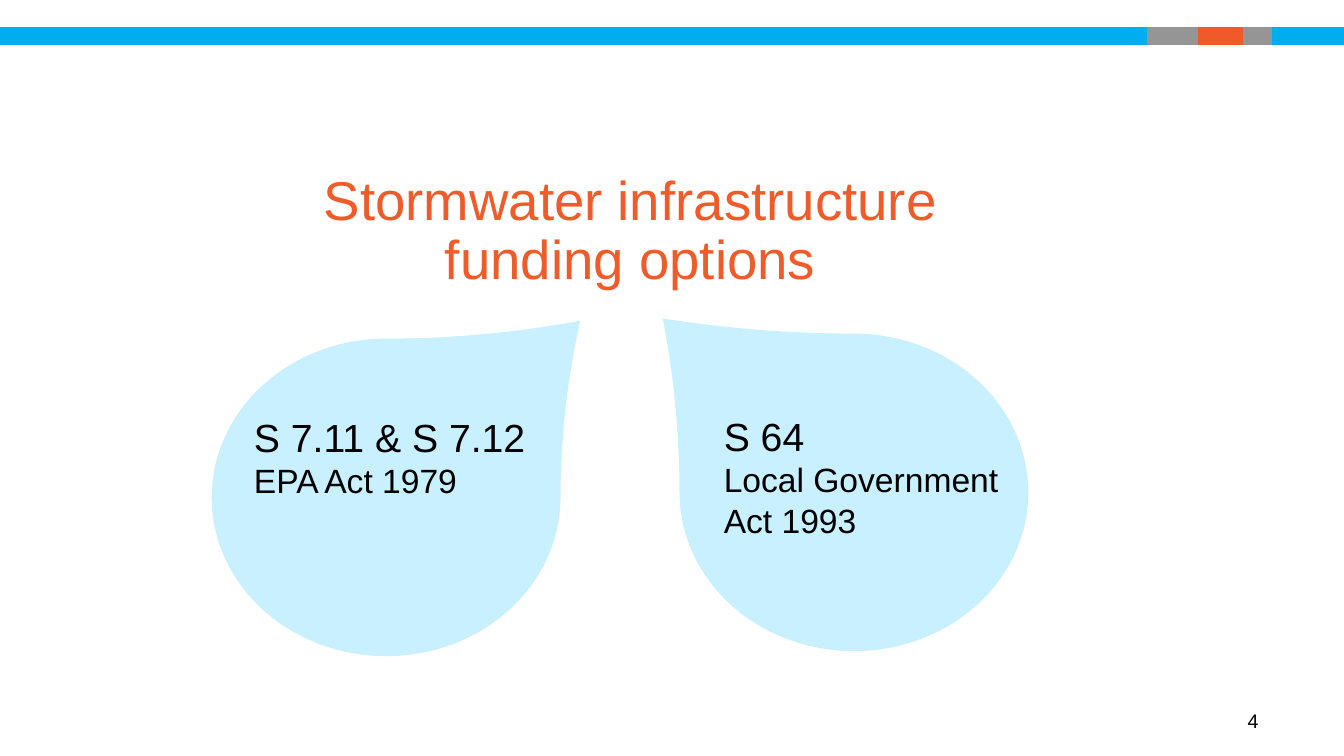
from dataclasses import dataclass

from pptx import Presentation
from pptx.dml.color import RGBColor
from pptx.enum.shapes import MSO_SHAPE
from pptx.enum.text import MSO_ANCHOR, MSO_AUTO_SIZE, PP_ALIGN
from pptx.util import Inches, Pt


@dataclass(frozen=True)
class Theme:
    font: str = "Arial"
    blue: str = "00ADEF"
    grey: str = "959595"
    orange: str = "F05A28"
    title_color: str = "F15A29"
    drop: str = "C9F0FF"
    ink: str = "000000"
    title_size: int = 39
    section_size: int = 28
    act_size: int = 24
    number_size: int = 14


class SlideBuilder:
    def __init__(self, slide, theme):
        self.slide = slide
        self.theme = theme

    def add_run(self, paragraph, text, size, color):
        run = paragraph.add_run()
        run.text = text
        run.font.name = self.theme.font
        run.font.size = Pt(size)
        run.font.color.rgb = RGBColor.from_string(color)

    def add_title(self, text, left, top, width, height):
        title = self.slide.shapes.title
        title.left, title.top = Inches(left), Inches(top)
        title.width, title.height = Inches(width), Inches(height)
        frame = title.text_frame
        frame.word_wrap = True
        frame.auto_size = MSO_AUTO_SIZE.NONE
        frame.vertical_anchor = MSO_ANCHOR.MIDDLE
        heading = frame.paragraphs[0]
        heading.alignment = PP_ALIGN.CENTER
        heading.line_spacing = 0.9
        self.add_run(heading, text, self.theme.title_size, self.theme.title_color)

    def add_filled(self, kind, left, top, width, height, color):
        shape = self.slide.shapes.add_shape(
            kind, Inches(left), Inches(top), Inches(width), Inches(height))
        shape.shadow.inherit = False
        shape.fill.solid()
        shape.fill.fore_color.rgb = RGBColor.from_string(color)
        return shape

    def add_band(self, left, width, color):
        band = self.add_filled(MSO_SHAPE.RECTANGLE, left, 0.28, width, 0.16, color)
        band.line.color.rgb = RGBColor.from_string(color)
        band.line.width = Pt(1)

    def add_drop(self, left, top, point, flipped):
        drop = self.add_filled(
            MSO_SHAPE.TEAR, left, top, 3.46, 3.15, self.theme.drop)
        drop.adjustments[0] = point
        drop.line.fill.background()
        if flipped:
            drop._element.spPr.get_or_add_xfrm().set("flipH", "1")

    def add_text(self, paragraphs, left, top, width, height,
                 align=PP_ALIGN.LEFT, anchor=MSO_ANCHOR.TOP,
                 fit=MSO_AUTO_SIZE.SHAPE_TO_FIT_TEXT):
        box = self.slide.shapes.add_textbox(
            Inches(left), Inches(top), Inches(width), Inches(height))
        frame = box.text_frame
        frame.word_wrap = True
        frame.auto_size = fit
        frame.vertical_anchor = anchor
        for index, runs in enumerate(paragraphs):
            paragraph = frame.add_paragraph() if index else frame.paragraphs[0]
            paragraph.alignment = align
            for text, size in runs:
                self.add_run(paragraph, text, size, self.theme.ink)


def main():
    deck = Presentation()
    deck.slide_width, deck.slide_height = Inches(13.33), Inches(7.5)
    theme = Theme()
    builder = SlideBuilder(deck.slides.add_slide(deck.slide_layouts[5]), theme)

    for left, width, color in (
        (0, 13.33, theme.blue),
        (11.38, 1.23, theme.grey),
        (11.89, 0.43, theme.orange),
    ):
        builder.add_band(left, width, color)

    builder.add_text([[("4", theme.number_size)]], 11.15, 6.95, 1.43, 0.4,
                     PP_ALIGN.RIGHT, MSO_ANCHOR.MIDDLE, MSO_AUTO_SIZE.NONE)
    builder.add_title("Stormwater infrastructure funding options",
                      2.99, 1.15, 6.52, 2.3)

    builder.add_drop(2.1, 3.36, 1.113, flipped=False)
    builder.add_text(
        [[("S 7.11 & S 7.12 ", theme.section_size),
          ("EPA Act 1979", theme.act_size)]],
        2.42, 4.05, 3.15, 1.28)

    builder.add_drop(6.74, 3.31, 1.096, flipped=True)
    builder.add_text(
        [[("S 64", theme.section_size)],
         [("Local Government Act 1993", theme.act_size)]],
        7.08, 4.04, 3.15, 1.68)

    deck.save("out.pptx")


if __name__ == "__main__":
    main()
